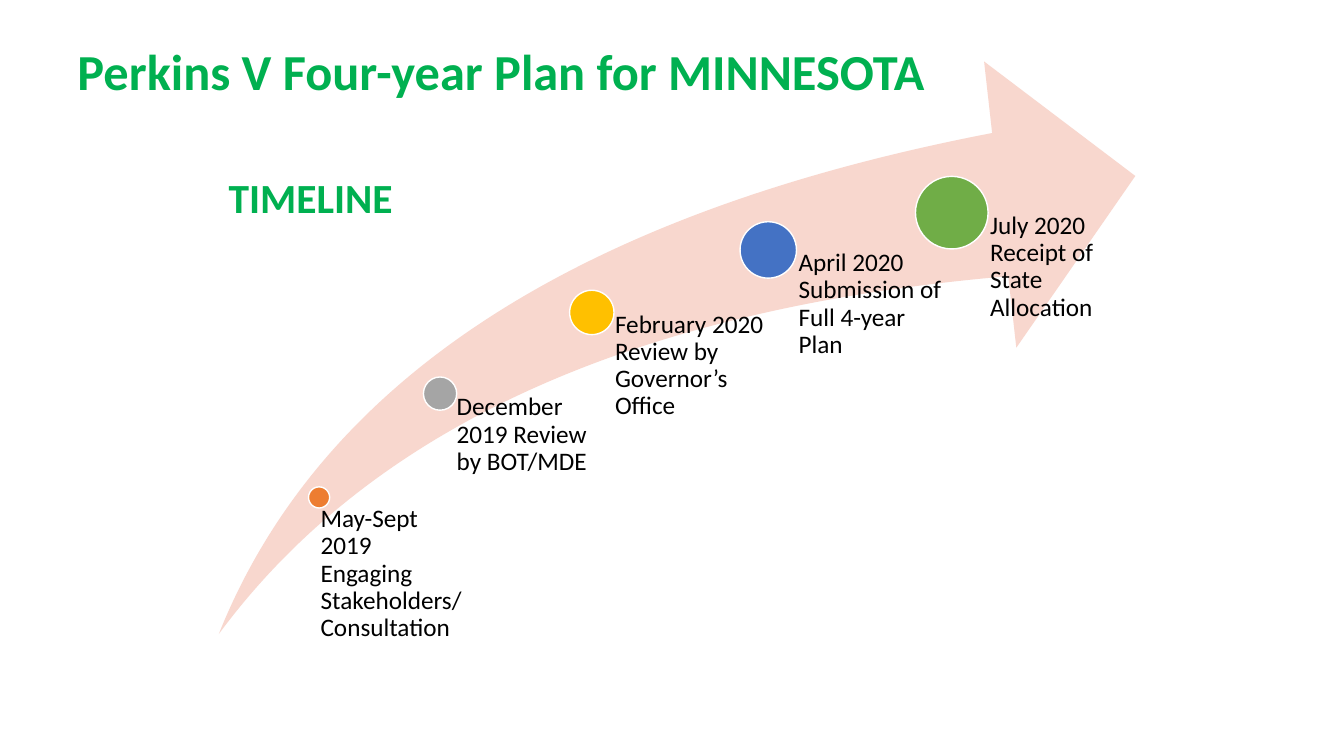
from pptx import Presentation
from pptx.dml.color import RGBColor
from pptx.enum import shapes, text
from pptx.util import Inches, Pt

COLORS = {
    "green": "00B050", "black": "000000", "white": "FFFFFF", "swoosh": "F8D7CE",
    "orange": "ED7D31", "grey": "A5A5A5", "gold": "FFC000", "blue": "4472C4",
    "leaf": "70AD47",
}


class TimelineSlide:
    font = "Calibri"

    def __init__(self, slide):
        self.slide = slide

    def color(self, name):
        return RGBColor.from_string(COLORS[name])

    def shape(self, kind, left, top, width, height, fill, outline=None):
        shape = self.slide.shapes.add_shape(
            kind, Inches(left), Inches(top), Inches(width), Inches(height))
        shape.shadow.inherit = False
        shape.fill.solid()
        shape.fill.fore_color.rgb = self.color(fill)
        if outline:
            shape.line.color.rgb = self.color(outline)
            shape.line.width = Pt(1)
        else:
            shape.line.fill.background()
        return shape

    def text(self, words, left, top, width, height, size, color="black",
             bold=False, spacing=0.9, before=0, insets=(0.1, 0.05, 0.1, 0.05)):
        box = self.slide.shapes.add_textbox(
            Inches(left), Inches(top), Inches(width), Inches(height))
        frame = box.text_frame
        frame.word_wrap = True
        frame.vertical_anchor = text.MSO_ANCHOR.TOP
        (frame.margin_left, frame.margin_top,
         frame.margin_right, frame.margin_bottom) = map(Inches, insets)
        paragraph = frame.paragraphs[0]
        paragraph.text = words
        paragraph.line_spacing = spacing
        paragraph.space_before = Pt(before)
        paragraph.font.name = self.font
        paragraph.font.size = Pt(size)
        paragraph.font.bold = bold
        paragraph.font.color.rgb = self.color(color)

    def heading(self, words, left, top, width, height, size, spacing):
        self.text(words, left, top, width, height, size, "green", True, spacing, 10)

    def milestone(self, words, dot, diameter, fill, label, inset):
        self.shape(shapes.MSO_SHAPE.OVAL, *dot, diameter, diameter, fill, "white")
        self.text(words, *label, 18, insets=(inset, 0, 0, 0))


def main():
    prs = Presentation()
    prs.slide_width, prs.slide_height = Inches(13.33), Inches(7.5)
    page = TimelineSlide(prs.slides.add_slide(prs.slide_layouts[6]))

    # Headings
    page.heading("TIMELINE", 2.17, 1.75, 2.06, 0.54, 29.6, 0.8)
    page.heading("Perkins V Four-year Plan for MINNESOTA",
                 0.67, 0.42, 11.89, 1.17, 36, 0.9)

    # Rising arrow
    arrow = page.shape(shapes.MSO_SHAPE.SWOOSH_ARROW, 2.17, 0.61, 9.09, 5.68, "swoosh")
    arrow.adjustments[0] = arrow.adjustments[1] = 0.25

    # Milestones: words, dot corner, diameter, fill, label box, label inset
    milestones = [
        ("May-Sept 2019 Engaging Stakeholders/Consultation",
         (3.06, 4.83), 0.21, "orange", (3.07, 5.02, 1.57, 2.33), 0.11),
        ("December 2019 Review by BOT/MDE",
         (4.2, 3.74), 0.33, "grey", (4.36, 3.91, 1.51, 2.38), 0.17),
        ("February 2020 Review by Governor’s Office",
         (5.65, 2.88), 0.44, "gold", (5.87, 3.09, 1.75, 3.19), 0.23),
        ("April 2020 Submission of Full 4-year Plan",
         (7.34, 2.2), 0.56, "blue", (7.62, 2.48, 1.82, 3.81), 0.3),
        ("July 2020 Receipt of State Allocation",
         (9.08, 1.75), 0.72, "leaf", (9.44, 2.11, 1.82, 4.18), 0.38),
    ]
    for milestone in milestones:
        page.milestone(*milestone)

    prs.save("out.pptx")


if __name__ == "__main__":
    main()
